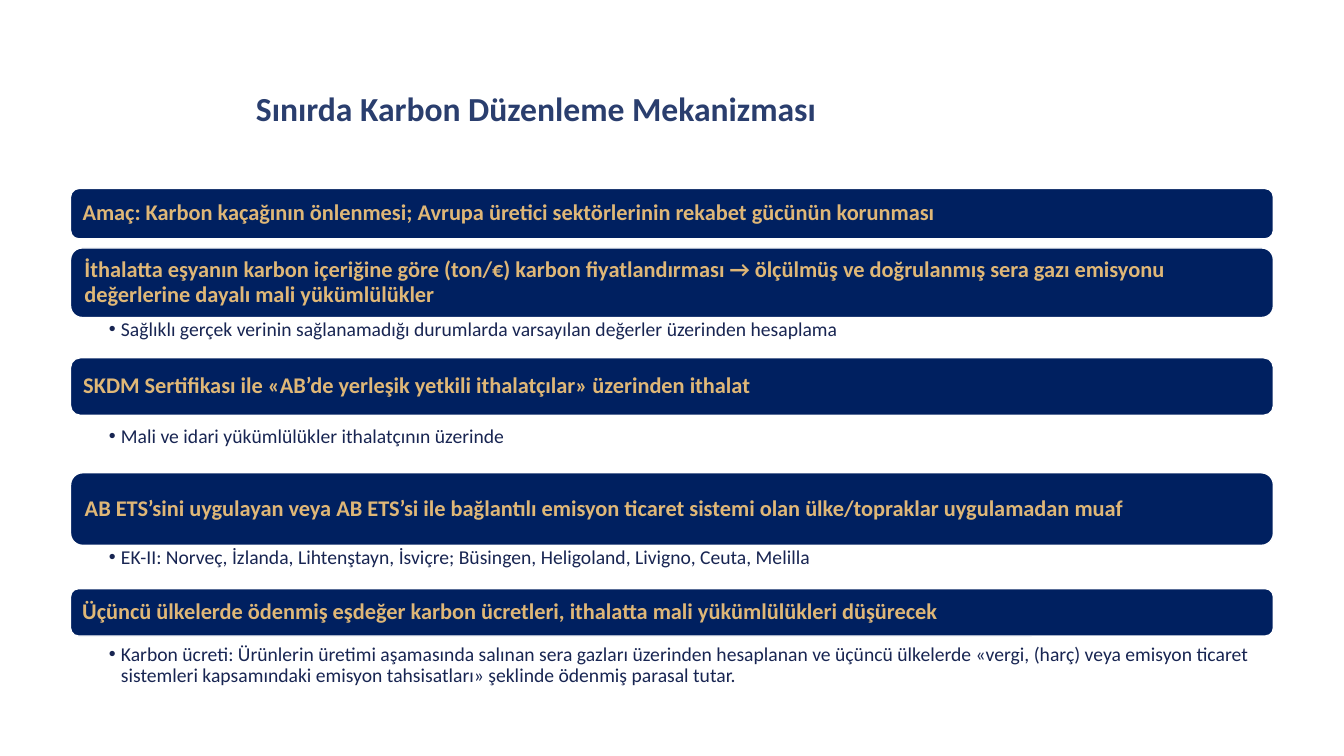
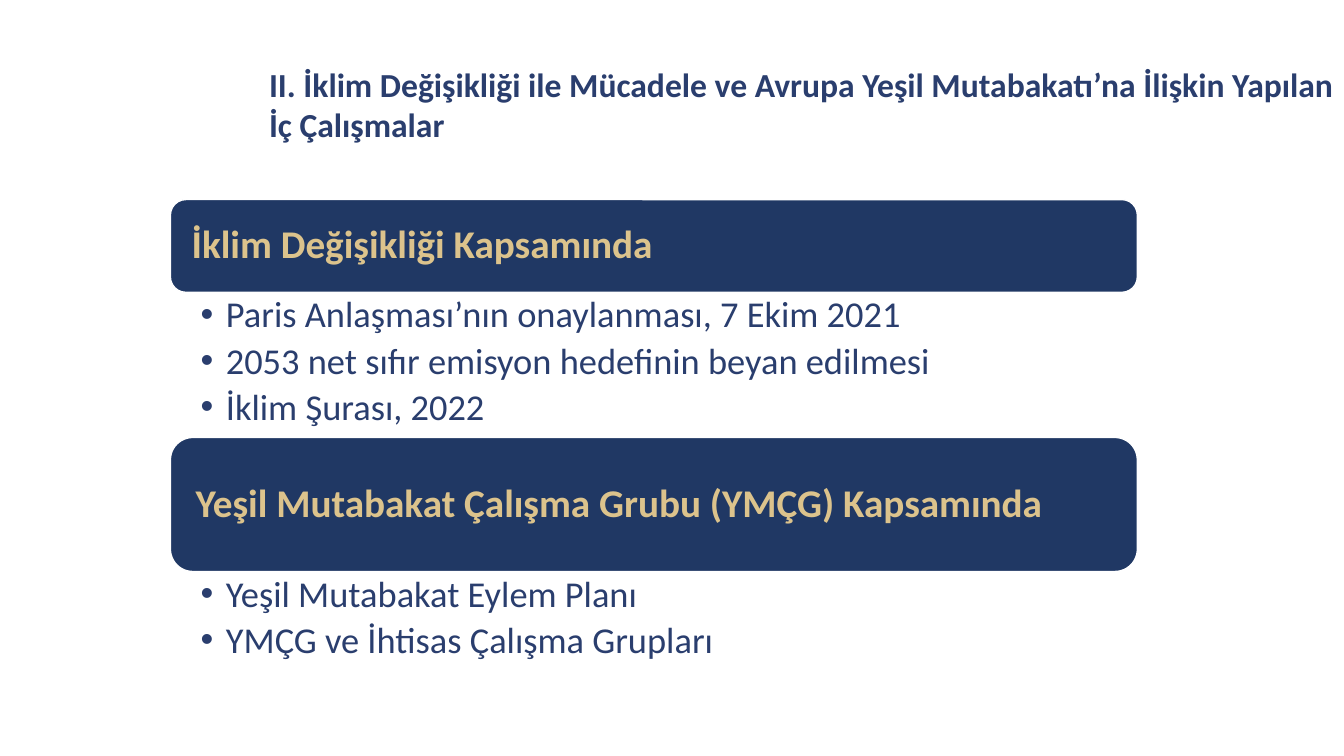
"""Build two slides of headed bands with bullet lists on carbon policy."""
from lxml.etree import SubElement
from pptx import Presentation
from pptx.dml.color import RGBColor
from pptx.enum.shapes import MSO_SHAPE as Shape
from pptx.enum.text import MSO_ANCHOR as Anchor, PP_ALIGN as Align
from pptx.oxml.ns import qn
from pptx.util import Inches, Pt

FONT = "Calibri"
COLOURS = {
    "white": "FFFFFF",
    "title": "2A3E6E",
    "deep_navy": "002060",
    "deep_text": "182552",
    "gold": "DFB777",
    "navy": "203864",
    "pale_gold": "DCC38C",
}

SLIDES = [
    {
        "title": "Sınırda Karbon Düzenleme Mekanizması",
        "title_box": (2.44, 0.82, 6.44, 0.88),
        "left": 0.7, "width": 11.93,
        "band": {"fill": "deep_navy", "color": "gold", "size": 16, "inset": 0.07},
        "list": {"color": "deep_text", "size": 14, "indent": 0.12,
                 "margins": (0.38, 0.02, 0.11, 0.02)},
        "sections": [
            {"top": 1.87, "height": 0.5, "bullets": [],
             "heading": "Amaç: Karbon kaçağının önlenmesi; Avrupa üretici sektörlerinin "
                        "rekabet gücünün korunması"},
            {"top": 2.46, "height": 0.69, "list_height": 0.49,
             "heading": "İthalatta eşyanın karbon içeriğine göre (ton/€) karbon fiyatlandırması "
                        "→ ölçülmüş ve doğrulanmış sera gazı emisyonu değerlerine dayalı "
                        "mali yükümlülükler",
             "bullets": ["Sağlıklı gerçek verinin sağlanamadığı durumlarda varsayılan "
                         "değerler üzerinden hesaplama"]},
            {"top": 3.55, "height": 0.57, "gap": 0.09, "list_height": 0.49,
             "heading": "SKDM Sertifikası ile «AB’de yerleşik yetkili ithalatçılar» "
                        "üzerinden ithalat",
             "bullets": ["Mali ve idari yükümlülükler ithalatçının üzerinde"]},
            {"top": 4.69, "height": 0.72, "list_height": 0.49,
             "heading": "AB ETS’sini uygulayan veya AB ETS’si ile bağlantılı emisyon ticaret "
                        "sistemi olan ülke/topraklar uygulamadan muaf",
             "bullets": ["EK-II: Norveç, İzlanda, Lihtenştayn, İsviçre; Büsingen, "
                         "Heligoland, Livigno, Ceuta, Melilla"]},
            {"top": 5.84, "height": 0.47, "gap": 0.06, "list_height": 0.64,
             "heading": "Üçüncü ülkelerde ödenmiş eşdeğer karbon ücretleri, ithalatta mali "
                        "yükümlülükleri düşürecek",
             "bullets": ["Karbon ücreti: Ürünlerin üretimi aşamasında salınan sera gazları "
                         "üzerinden hesaplanan ve üçüncü ülkelerde «vergi, (harç) veya emisyon "
                         "ticaret sistemleri kapsamındaki emisyon tahsisatları» şeklinde "
                         "ödenmiş parasal tutar."]},
        ],
    },
    {
        "title": "II. İklim Değişikliği ile Mücadele ve Avrupa Yeşil Mutabakatı’na İlişkin "
                 "Yapılan İç Çalışmalar",
        "title_box": (2.57, 0.58, 10.8, 0.91),
        "left": 1.69, "width": 9.59,
        "band": {"fill": "navy", "color": "pale_gold", "size": 28, "inset": 0.12},
        "list": {"color": "title", "size": 26, "indent": 0.25,
                 "margins": (0.3, 0.04, 0.2, 0.04)},
        "sections": [
            {"top": 1.98, "height": 0.92, "list_height": 1.43,
             "heading": "İklim Değişikliği Kapsamında",
             "bullets": ["Paris Anlaşması’nın onaylanması, 7 Ekim 2021",
                         "2053 net sıfır emisyon hedefinin beyan edilmesi",
                         "İklim Şurası, 2022"]},
            {"top": 4.34, "height": 1.33, "list_height": 1.18,
             "heading": "Yeşil Mutabakat Çalışma Grubu (YMÇG) Kapsamında",
             "bullets": ["Yeşil Mutabakat Eylem Planı",
                         "YMÇG ve İhtisas Çalışma Grupları"]},
        ],
    },
]


def rgb(name):
    return RGBColor.from_string(COLOURS[name])


def write_text(shape, lines, *, size, color, bold=False, anchor=Anchor.TOP,
               margins=(0.1, 0.05, 0.1, 0.05), line_spacing=1.0, indent=0):
    """Fill a shape with paragraphs, bulleted when an indent is given."""
    frame = shape.text_frame
    frame.word_wrap = True
    frame.vertical_anchor = anchor
    (frame.margin_left, frame.margin_top,
     frame.margin_right, frame.margin_bottom) = map(Inches, margins)
    for index, line in enumerate(lines):
        paragraph = frame.add_paragraph() if index else frame.paragraphs[0]
        paragraph.alignment = Align.LEFT
        paragraph.line_spacing = line_spacing
        if indent:
            paragraph.space_after = Pt(round(size * 0.2))
            properties = paragraph._p.get_or_add_pPr()
            properties.set("marL", str(Inches(indent)))
            properties.set("indent", str(-Inches(indent)))
            SubElement(properties, qn("a:buFont"), typeface="Arial")
            SubElement(properties, qn("a:buChar"), char="•")
        run = paragraph.add_run()
        run.text = line
        run.font.name = FONT
        run.font.size = Pt(size)
        run.font.bold = bold
        run.font.color.rgb = rgb(color)


def add_band(slide, box, heading, style):
    """Draw a rounded band whose text clears its corners."""
    band = slide.shapes.add_shape(Shape.ROUNDED_RECTANGLE, *map(Inches, box))
    band.shadow.inherit = False
    band.fill.solid()
    band.fill.fore_color.rgb = rgb(style["fill"])
    band.line.color.rgb = rgb("white")
    band.line.width = Pt(1)
    inset = style["inset"] + 0.05 * box[3]
    write_text(band, [heading], size=style["size"], color=style["color"], bold=True,
               anchor=Anchor.MIDDLE, margins=(inset,) * 4, line_spacing=0.9)


def add_text_box(slide, box, lines, **text_format):
    text_box = slide.shapes.add_textbox(*map(Inches, box))
    write_text(text_box, lines, **text_format)


def build_slide(presentation, content):
    """Add a title, then each section's band with its list below."""
    slide = presentation.slides.add_slide(presentation.slide_layouts[6])
    left, width = content["left"], content["width"]
    for section in content["sections"]:
        top, height = section["top"], section["height"]
        add_band(slide, (left, top, width, height), section["heading"], content["band"])
        if section["bullets"]:
            list_top = top + height + section.get("gap", 0)
            add_text_box(slide, (left, list_top, width, section["list_height"]),
                         section["bullets"], line_spacing=0.9, **content["list"])
    add_text_box(slide, content["title_box"], [content["title"]],
                 size=24, color="title", bold=True)


def main():
    presentation = Presentation()
    presentation.slide_width = Inches(13.33)
    presentation.slide_height = Inches(7.5)
    for content in SLIDES:
        build_slide(presentation, content)
    presentation.save("out.pptx")


if __name__ == "__main__":
    main()
